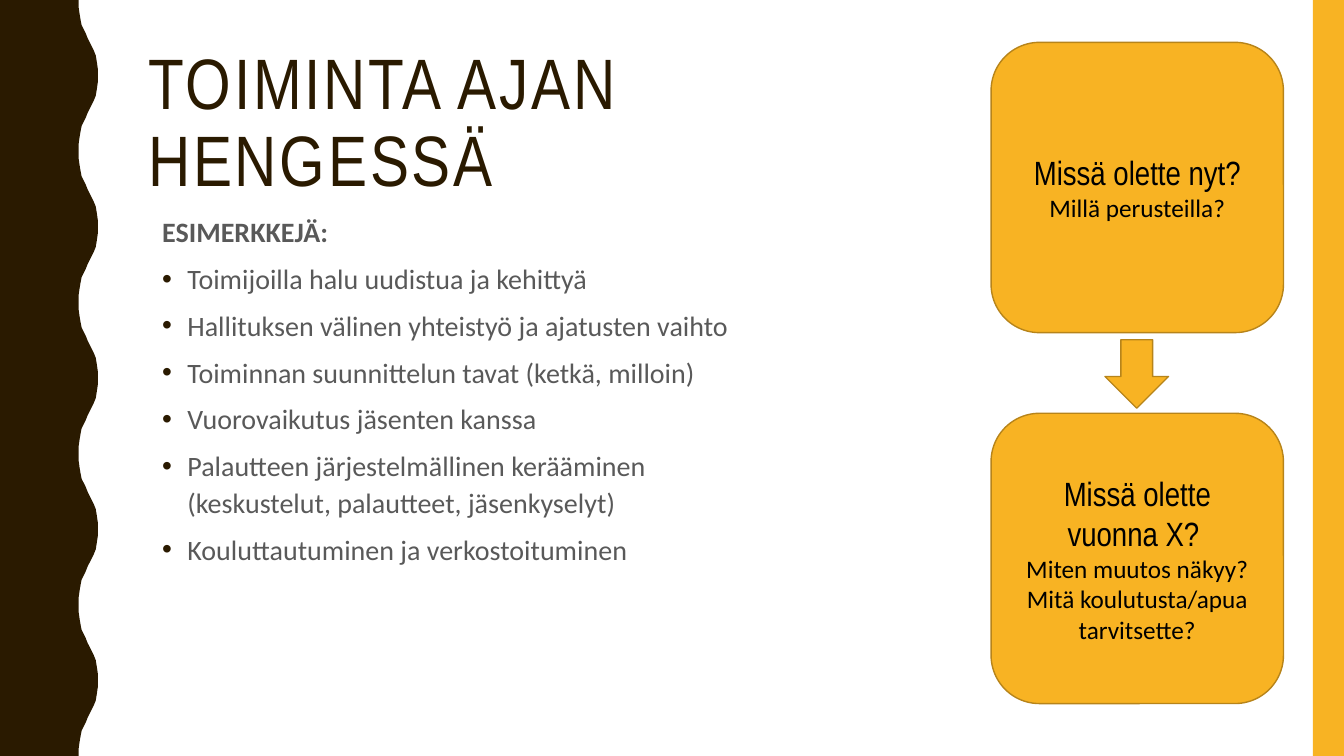
import pptx
import pptx.util
import pptx.dml.color
import pptx.enum.shapes
import pptx.enum.text
import pptx.oxml.ns
from dataclasses import dataclass
from lxml import etree

Inches = pptx.util.Inches
Pt = pptx.util.Pt
Kind = pptx.enum.shapes.MSO_SHAPE
Align = pptx.enum.text.PP_ALIGN
Anchor = pptx.enum.text.MSO_ANCHOR
qn = pptx.oxml.ns.qn


@dataclass(frozen=True)
class Theme:
    dark: str = "2A1A00"
    gold: str = "F8B323"
    edge: str = "B7841A"
    gray: str = "595959"
    black: str = "000000"
    head: str = "Arial Narrow"
    text: str = "Calibri"
    title: int = 51
    body: int = 20
    lead: int = 24
    note: int = 18


THEME = Theme()
WIDE, HIGH = 13.33, 7.5

# Half a wave of the left band, from trough to crest: (x, y) in inches
WAVE = [(0.78, 0), (0.78, 0.07), (0.79, 0.14), (0.8, 0.2), (0.81, 0.25),
        (0.83, 0.29), (0.85, 0.33), (0.87, 0.38), (0.89, 0.42), (0.91, 0.46),
        (0.93, 0.5), (0.95, 0.55), (0.96, 0.61), (0.97, 0.68), (0.97, 0.75)]
PERIOD = 1.5

POINTS = [
    "Toimijoilla halu uudistua ja kehittyä",
    "Hallituksen välinen yhteistyö ja ajatusten vaihto",
    "Toiminnan suunnittelun tavat (ketkä, milloin)",
    "Vuorovaikutus jäsenten kanssa",
    "Palautteen järjestelmällinen kerääminen \v(keskustelut, palautteet, jäsenkyselyt)",
    "Kouluttautuminen ja verkostoituminen",
]

# Card top, question, notes
CARDS = [
    (0.42, "Missä olette nyt?", ["Millä perusteilla?"]),
    (4.1, "Missä olette vuonna X? ",
     ["Miten muutos näkyy?", "Mitä koulutusta/apua tarvitsette?"]),
]


def rgb(code):
    return pptx.dml.color.RGBColor.from_string(code)


def place(shape, left, top, width, height):
    shape.left, shape.top = Inches(left), Inches(top)
    shape.width, shape.height = Inches(width), Inches(height)


def paint(shape, fill, line=None):
    shape.shadow.inherit = False
    shape.fill.solid()
    shape.fill.fore_color.rgb = rgb(fill)
    if line:
        shape.line.color.rgb = rgb(line)
        shape.line.width = Pt(1)
    else:
        shape.line.fill.background()


def style(para, name, size, color, bold=False):
    font = para.font
    font.name, font.size, font.bold = name, Pt(size), bold
    font.color.rgb = rgb(color)


def bullet(para, color):
    props = para._p.get_or_add_pPr()
    props.set("marL", str(Inches(0.25)))
    props.set("indent", str(-Inches(0.25)))
    tint = etree.SubElement(props, qn("a:buClr"))
    etree.SubElement(tint, qn("a:srgbClr"), val=color)
    etree.SubElement(props, qn("a:buFont"), typeface="Arial")
    etree.SubElement(props, qn("a:buChar"), char="•")


def block(slide, kind, left, top, width, height, line=None):
    shape = slide.shapes.add_shape(kind, 0, 0, 0, 0)
    place(shape, left, top, width, height)
    paint(shape, THEME.gold, line)
    return shape


def add_wave(slide):
    cycle = WAVE + [(x, PERIOD - y) for x, y in WAVE[-2:0:-1]]
    edge = [(x, y + turn * PERIOD)
            for turn in range(int(HIGH / PERIOD)) for x, y in cycle]
    edge += [(WAVE[0][0], HIGH), (0, HIGH)]
    path = slide.shapes.build_freeform(0, 0, scale=1.0)
    path.add_line_segments([(Inches(x), Inches(y)) for x, y in edge], close=True)
    paint(path.convert_to_shape(), THEME.dark)


def add_title(slide, text):
    title = slide.shapes.title
    place(title, 1.37, 0.42, 8.1, 2.08)
    frame = title.text_frame
    frame.text = text
    frame.word_wrap = True
    frame.auto_size = pptx.enum.text.MSO_AUTO_SIZE.NONE
    frame.vertical_anchor = Anchor.TOP
    para = frame.paragraphs[0]
    para.alignment, para.line_spacing = Align.LEFT, 0.9
    style(para, THEME.head, THEME.title, THEME.dark)
    para._p.pPr.find(qn("a:defRPr")).set("spc", "200")


def add_list(slide, head, items):
    box = slide.shapes.add_textbox(0, 0, 0, 0)
    place(box, 1.51, 2.05, 7.69, 5.03)
    frame = box.text_frame
    frame.word_wrap = True
    frame.text = "\n".join([head] + items)
    for spot, para in enumerate(frame.paragraphs):
        if spot:
            bullet(para, THEME.dark)
        para.line_spacing, para.space_before = 1.1, Pt(7)
        style(para, THEME.text, THEME.body, THEME.gray, bold=spot == 0)


def add_card(slide, top, lead, notes):
    card = block(slide, Kind.ROUNDED_RECTANGLE, 9.83, top, 2.9, 2.88, THEME.edge)
    frame = card.text_frame
    frame.word_wrap = True
    frame.vertical_anchor = Anchor.MIDDLE
    frame.text = "\n".join([lead] + notes)
    for spot, para in enumerate(frame.paragraphs):
        para.alignment = Align.CENTER
        if spot:
            style(para, THEME.text, THEME.note, THEME.black)
        else:
            style(para, THEME.head, THEME.lead, THEME.black)


def main():
    deck = pptx.Presentation()
    deck.slide_width, deck.slide_height = Inches(WIDE), Inches(HIGH)
    slide = deck.slides.add_slide(deck.slide_layouts[5])

    # Side bands
    add_wave(slide)
    block(slide, Kind.RECTANGLE, 13.02, 0, 0.31, HIGH)

    # Title and examples
    add_title(slide, "TOIMINTA AJAN \vHENGESSÄ")
    add_list(slide, "ESIMERKKEJÄ:", POINTS)

    # Cards and the arrow between them
    for card in CARDS:
        add_card(slide, *card)
    block(slide, Kind.DOWN_ARROW, 10.96, 3.37, 0.63, 0.68, THEME.edge)

    deck.save("out.pptx")


if __name__ == "__main__":
    main()
